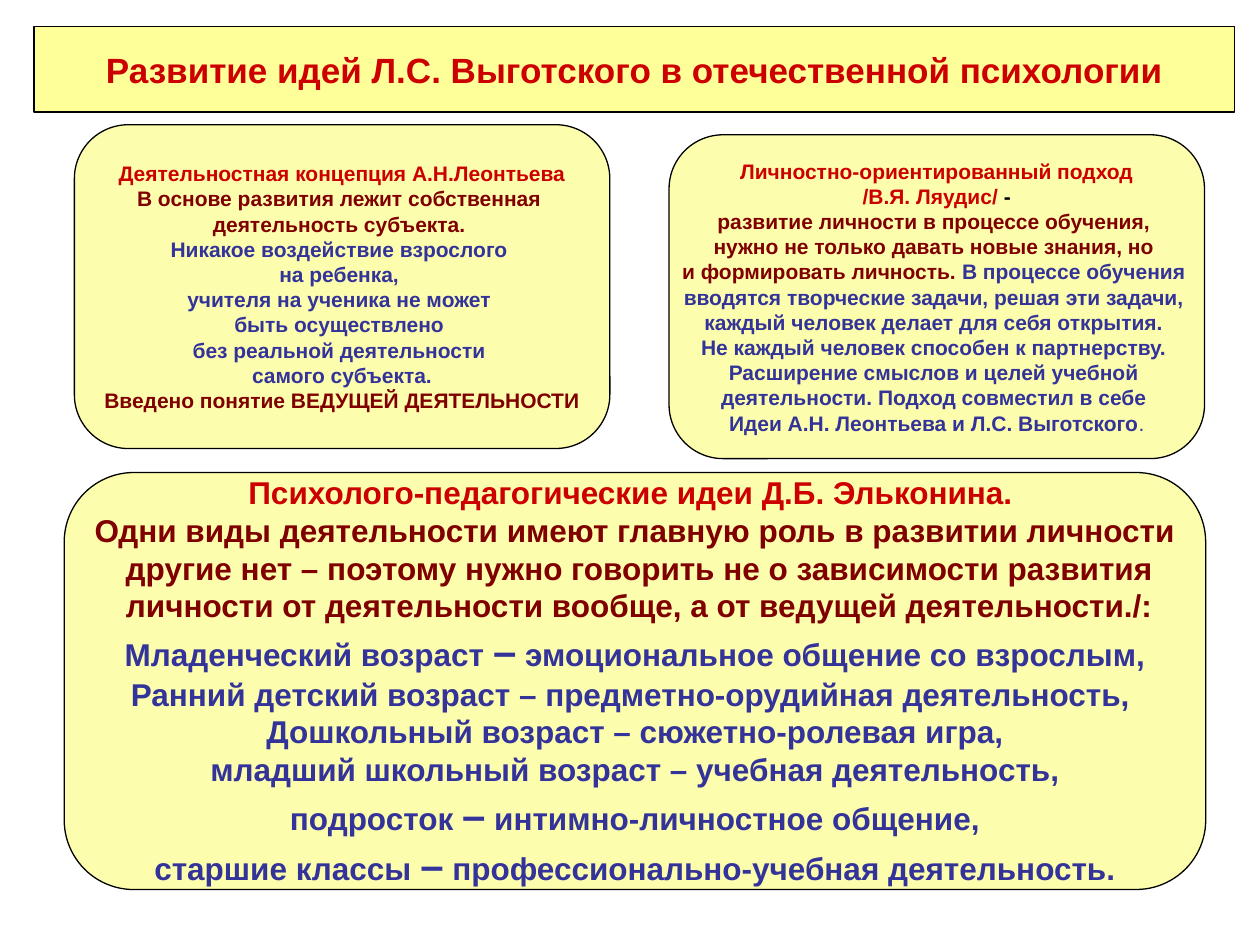
"""Build a slide on how Vygotsky's ideas developed in Russian psychology."""
from pptx import Presentation
from pptx.dml.color import RGBColor
from pptx.enum.shapes import MSO_SHAPE
from pptx.enum.text import MSO_ANCHOR, MSO_AUTO_SIZE, PP_ALIGN
from pptx.util import Inches, Pt

ROUNDED = MSO_SHAPE.ROUNDED_RECTANGLE
MIDDLE = MSO_ANCHOR.MIDDLE
NO_AUTOFIT = MSO_AUTO_SIZE.NONE
CENTER = PP_ALIGN.CENTER

RED = RGBColor(0xCC, 0x00, 0x00)
MAROON = RGBColor(0x80, 0x00, 0x00)
INDIGO = RGBColor(0x33, 0x33, 0x99)
BLACK = RGBColor(0x00, 0x00, 0x00)
BANNER_YELLOW = RGBColor(0xFF, 0xFF, 0x99)
CARD_YELLOW = RGBColor(0xFC, 0xFE, 0xAE)

FONT = "Arial"
TITLE = "Развитие идей Л.С. Выготского в отечественной психологии"
BIG_DASH = ("–", INDIGO, {"size": Pt(24)})


def lines(color, *texts):
    """Return one single-run paragraph per text, all in one colour."""
    return [[(text, color)] for text in texts]


def age_line(age, activity):
    """Return a paragraph that joins an age and its activity by a large dash."""
    return [(age + " ", INDIGO), BIG_DASH, (" " + activity, INDIGO)]


LEONTIEV = [
    *lines(RED, "Деятельностная концепция А.Н.Леонтьева"),
    *lines(MAROON, "В основе развития лежит собственная ", "деятельность субъекта. "),
    *lines(
        INDIGO,
        "Никакое воздействие взрослого ",
        "на ребенка, ",
        "учителя на ученика не может ",
        "быть осуществлено ",
        "без реальной деятельности ",
        "самого субъекта.",
    ),
    *lines(MAROON, "Введено понятие ВЕДУЩЕЙ ДЕЯТЕЛЬНОСТИ"),
]

LYAUDIS = [
    *lines(RED, "Личностно-ориентированный подход"),
    [(" /В.Я. Ляудис/", RED), (" - ", BLACK)],
    *lines(
        MAROON,
        "развитие личности в процессе обучения, ",
        "нужно не только давать новые знания, но ",
    ),
    [("и формировать личность.", MAROON), (" В процессе обучения ", INDIGO)],
    *lines(
        INDIGO,
        "вводятся творческие задачи, решая эти задачи, ",
        "каждый человек делает для себя открытия. ",
        "Не каждый человек способен к партнерству. ",
        "Расширение смыслов и целей учебной ",
        "деятельности. Подход совместил в себе ",
    ),
    [("Идеи А.Н. Леонтьева и Л.С. Выготского", INDIGO), (".", INDIGO, {"bold": False})],
]

ELKONIN = [
    *lines(RED, "Психолого-педагогические идеи Д.Б. Эльконина. "),
    *lines(
        MAROON,
        "Одни виды деятельности имеют главную роль в развитии личности",
        " другие нет – поэтому нужно говорить не о зависимости развития",
        " личности от деятельности вообще, а от ведущей деятельности./:",
    ),
    age_line("Младенческий возраст", "эмоциональное общение со взрослым,"),
    *lines(
        INDIGO,
        "Ранний детский возраст – предметно-орудийная деятельность, ",
        "Дошкольный возраст – сюжетно-ролевая игра,",
        "младший школьный возраст – учебная деятельность,",
    ),
    age_line("подросток", "интимно-личностное общение,"),
    age_line("старшие классы", "профессионально-учебная деятельность."),
]


def format_run(run, color, size, bold=True):
    """Set the font of a run."""
    run.font.name = FONT
    run.font.size = size
    run.font.bold = bold
    run.font.color.rgb = color


def format_panel(panel, fill):
    """Give a panel its fill, thin black outline and centred unwrapped text."""
    panel.fill.solid()
    panel.fill.fore_color.rgb = fill
    panel.line.color.rgb = BLACK
    panel.line.width = Pt(0.75)
    frame = panel.text_frame
    frame.auto_size = NO_AUTOFIT
    frame.word_wrap = False
    frame.vertical_anchor = MIDDLE


def add_title(slide):
    """Place the title as a banner across the top."""
    title = slide.shapes.title
    title.left, title.top = Inches(0.27), Inches(0.21)
    title.width, title.height = Inches(9.53), Inches(0.68)
    format_panel(title, BANNER_YELLOW)
    title.text_frame.text = TITLE
    heading = title.text_frame.paragraphs[0]
    heading.alignment = CENTER
    format_run(heading.runs[0], RED, Pt(20))


def add_card(slide, left, top, width, height, paragraphs, size):
    """Add a rounded card with coloured paragraphs."""
    card = slide.shapes.add_shape(
        ROUNDED, Inches(left), Inches(top), Inches(width), Inches(height)
    )
    card.shadow.inherit = False
    format_panel(card, CARD_YELLOW)
    frame = card.text_frame
    for index, runs in enumerate(paragraphs):
        paragraph = frame.add_paragraph() if index else frame.paragraphs[0]
        paragraph.alignment = CENTER
        for text, color, *overrides in runs:
            run = paragraph.add_run()
            run.text = text
            style = {"size": Pt(size)}
            for override in overrides:
                style.update(override)
            format_run(run, color, **style)


def main():
    """Build and save the slide."""
    presentation = Presentation()
    presentation.slide_width = Inches(10)
    presentation.slide_height = Inches(7.5)
    slide = presentation.slides.add_slide(presentation.slide_layouts[5])
    add_title(slide)
    add_card(slide, 0.51, 3.75, 9.06, 3.31, ELKONIN, 18)
    add_card(slide, 0.59, 0.99, 4.25, 2.57, LEONTIEV, 12)
    add_card(slide, 5.31, 1.07, 4.25, 2.57, LYAUDIS, 12)
    presentation.save("out.pptx")


if __name__ == "__main__":
    main()
